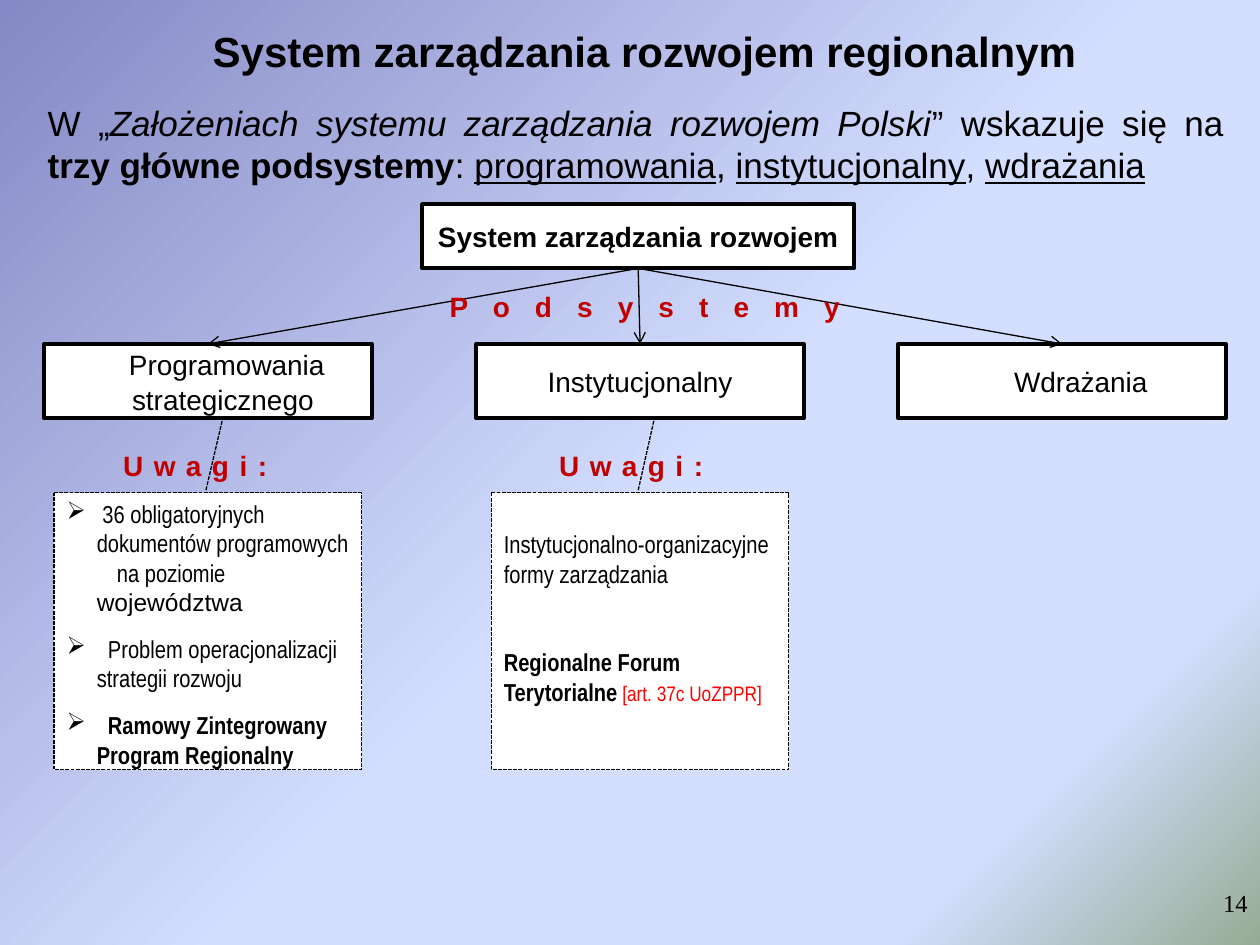
from lxml import etree
from pptx import Presentation
from pptx import util as u
from pptx.dml.color import RGBColor
from pptx.enum import dml, shapes, text
from pptx.oxml.ns import qn

BLACK = RGBColor(0, 0, 0)
WHITE = RGBColor(255, 255, 255)
CRIMSON = RGBColor(0xC0, 0, 0)
RED = RGBColor(255, 0, 0)
STOPS = [(0, "8488C4"), (53, "D4DEFF"), (83, "D4DEFF"), (100, "96AB94")]
MID = text.PP_ALIGN.CENTER
LEFT = text.PP_ALIGN.LEFT
NARROW = "Arial Narrow"


def add_sub(parent, tag, **attrs):
    """Append a drawing element to its parent."""
    return etree.SubElement(parent, qn(tag), attrs)


def paint_back(slide):
    """Fill the background with the diagonal gradient."""
    fill = slide.background.fill
    fill.gradient()
    fill.gradient_angle = 315
    stops = next(slide.element.iter(qn("a:gsLst")))
    for old in list(stops):
        stops.remove(old)
    for pos, color in STOPS:
        stop = add_sub(stops, "a:gs", pos=str(pos * 1000))
        add_sub(stop, "a:srgbClr", val=color)


def add_run(para, words, size, font="Arial", color=BLACK, space=0, **style):
    """Add one styled run, with optional letter spacing in points."""
    run = para.add_run()
    run.text = words
    face = run.font
    face.size, face.name = u.Pt(size), font
    face.color.rgb = color
    for name, value in style.items():
        setattr(face, name, value)
    if space:
        run._r.get_or_add_rPr().set("spc", str(space * 100))


def set_indent(para, left, first=0):
    """Set the left margin and first-line indent in inches."""
    props = para._p.get_or_add_pPr()
    props.set("marL", str(u.Inches(left)))
    props.set("indent", str(u.Inches(first)))
    return props


def add_text(slide, place, align, wrap=True):
    """Add a text box and return its frame and first paragraph."""
    frame = slide.shapes.add_textbox(*map(u.Inches, place)).text_frame
    frame.word_wrap = wrap
    para = frame.paragraphs[0]
    para.alignment = align
    return frame, para


def add_label(slide, place, words, space, wrap=True):
    """Add a spaced crimson label."""
    para = add_text(slide, place, MID, wrap)[1]
    add_run(para, words, 16, color=CRIMSON, space=space, bold=True)


def add_shape(slide, kind, place, width):
    """Add a white shape with a black outline."""
    shape = slide.shapes.add_shape(kind, *map(u.Inches, place))
    shape.shadow.inherit = False
    shape.fill.solid()
    shape.fill.fore_color.rgb = WHITE
    shape.line.color.rgb = BLACK
    shape.line.width = u.Pt(width)
    shape.text_frame.word_wrap = True
    return shape


def add_box(slide, place, words, bold=False, inset=None):
    """Add a diagram box, indented when side insets are given."""
    box = add_shape(slide, shapes.MSO_SHAPE.RECTANGLE, place, 2.25)
    frame = box.text_frame
    frame.vertical_anchor = text.MSO_ANCHOR.MIDDLE
    para = frame.paragraphs[0]
    para.alignment = MID
    para.space_after = u.Pt(10)
    if inset:
        frame.margin_left, frame.margin_right = map(u.Inches, inset)
        para.line_spacing = 1.03
        para.space_before = u.Pt(5.8)
        set_indent(para, 0.5)
    add_run(para, words, 16, bold=bold)
    return box


def add_arrow(slide, start, end):
    """Join the bottom of one box to the top of another."""
    line = slide.shapes.add_connector(shapes.MSO_CONNECTOR.STRAIGHT, 0, 0, 0, 0)
    line.begin_connect(start, 2)
    line.end_connect(end, 0)
    line.line.color.rgb = BLACK
    line.line.width = u.Pt(0.75)
    add_sub(line.line._get_or_add_ln(), "a:tailEnd", type="arrow")
    add_sub(line._element.spPr, "a:effectLst")


def add_note(slide, left, width):
    """Add a dashed callout and return its frame."""
    note = add_shape(slide, shapes.MSO_SHAPE.LINE_CALLOUT_1, (left, 3.91, width, 2.2), 0.75)
    note.line.dash_style = dml.MSO_LINE.SQUARE_DOT
    for i, value in enumerate((-0.009, 0.494, -0.266, 0.548)):
        note.adjustments[i] = value
    frame = note.text_frame
    frame.vertical_anchor = text.MSO_ANCHOR.TOP
    return frame


def next_para(frame, first):
    """Return the first paragraph or a new one, left aligned."""
    para = frame.paragraphs[0] if first else frame.add_paragraph()
    para.alignment = LEFT
    return para


def add_bullets(frame, items):
    """Fill a frame with bulleted lines of (words, font, bold)."""
    for i, lines in enumerate(items):
        para = next_para(frame, i == 0)
        para.space_after = u.Pt(10)
        props = set_indent(para, 0.24, -0.24)
        add_sub(props, "a:buChar", char="➢")
        tabs = add_sub(props, "a:tabLst")
        add_sub(tabs, "a:tab", pos=str(u.Inches(0.4)), algn="l")
        for j, (words, font, bold) in enumerate(lines):
            if j:
                para.add_line_break()
            add_run(para, words, 14, font, bold=bold)


def add_head(slide):
    """Add the title, the lead sentence and the page number."""
    frame, para = add_text(slide, (0.51, 0.13, 9.21, 0.52), MID)
    frame.vertical_anchor = text.MSO_ANCHOR.BOTTOM
    para.line_spacing = 0.85
    add_run(para, "System zarządzania rozwojem regionalnym", 24, bold=True)
    para = add_text(slide, (0.28, 0.76, 9.53, 0.77), text.PP_ALIGN.JUSTIFY)[1]
    for words, style in (
        ("W „", {}),
        ("Założeniach systemu zarządzania rozwojem Polski", {"italic": True}),
        ("” wskazuje się na ", {}),
        ("trzy główne podsystemy", {"bold": True}),
        (": ", {}),
        ("programowania", {"underline": True}),
        (", ", {}),
        ("instytucjonalny", {"underline": True}),
        (", ", {}),
        ("wdrażania", {"underline": True}),
    ):
        add_run(para, words, 20, **style)
    para = add_text(slide, (7.92, 7, 2.08, 0.5), text.PP_ALIGN.RIGHT)[1]
    add_run(para, "14", 14, "Times New Roman")


def add_tree(slide):
    """Add the system box and its three subsystems."""
    root = add_box(slide, (3.35, 1.62, 3.43, 0.51), "System zarządzania rozwojem", True)
    for left, words, inset in (
        (0.35, "Programowania strategicznego ", (0, 0.2)),
        (3.78, "Instytucjonalny", None),
        (7.13, "Wdrażania ", (0.1, 0.24)),
    ):
        add_arrow(slide, root, add_box(slide, (left, 2.73, 2.6, 0.59), words, inset=inset))
    add_label(slide, (3.35, 2.25, 3.54, 0.37), "P o d s y s t e m y", 5)


def add_notes(slide):
    """Add both remark callouts with their labels."""
    add_bullets(add_note(slide, 0.43, 2.44), (
        ((" 36 obligatoryjnych", NARROW, False), ("dokumentów programowych", NARROW, False),
         ("\tna poziomie", NARROW, False), ("województwa", "Arial", False)),
        (("  Problem operacjonalizacji", NARROW, False), ("strategii rozwoju", NARROW, False)),
        (("  Ramowy Zintegrowany", NARROW, True), ("Program Regionalny", NARROW, True)),
    ))
    frame = add_note(slide, 3.9, 2.36)
    frame.margin_top = u.Inches(0.29)
    para = next_para(frame, True)
    add_run(para, "Instytucjonalno-organizacyjne formy zarządzania", 14, NARROW)
    para = next_para(frame, False)
    para.space_before = u.Pt(34)
    add_run(para, "Regionalne Forum Terytorialne", 14, NARROW, bold=True)
    add_run(para, " ", 12, NARROW, bold=True)
    add_run(para, "[art. 37c UoZPPR]", 12, NARROW, RED)
    for left in (0.83, 4.29):
        add_label(slide, (left, 3.51, 1.44, 0.37), "Uwagi:", 6, False)


def main():
    """Build and save the slide."""
    deck = Presentation()
    deck.slide_width, deck.slide_height = u.Inches(10), u.Inches(7.5)
    slide = deck.slides.add_slide(deck.slide_layouts[6])
    paint_back(slide)
    add_head(slide)
    add_tree(slide)
    add_notes(slide)
    deck.save("out.pptx")


if __name__ == "__main__":
    main()
